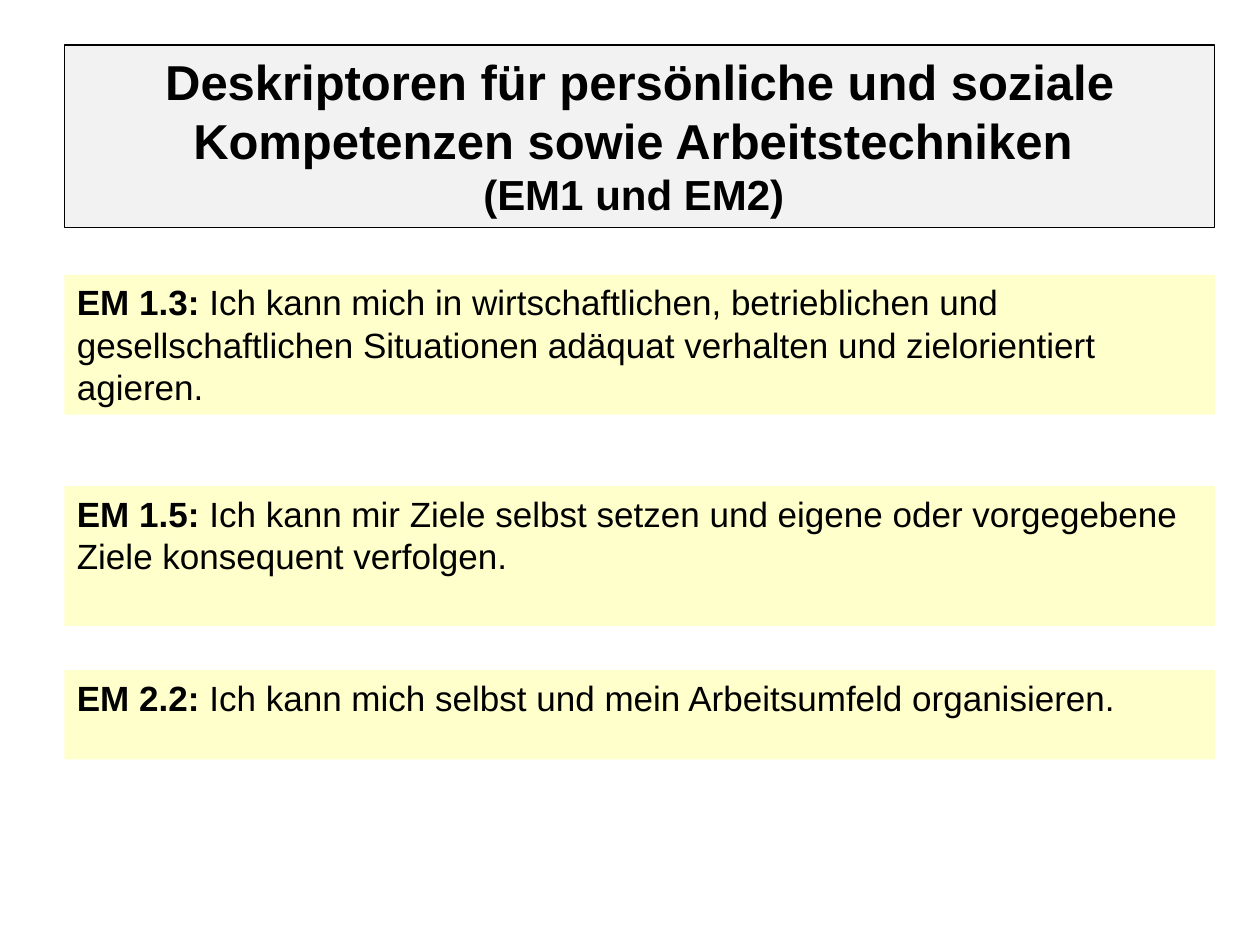
"""Build a slide of descriptors for personal and social competences."""
import pptx
import pptx.dml.color
import pptx.enum.shapes
import pptx.enum.text
import pptx.util

Cm = pptx.util.Cm
LEFT, WIDTH = 1.3, 23.19
TITLE = {
    "top": 0.91, "height": 3.68, "fill": "F2F2F2", "line": "000000", "align": "CENTER",
    "paragraphs": [
        [("Deskriptoren für persönliche und soziale Kompetenzen sowie Arbeitstechniken ", 28, True)],
        [("(EM1 und EM2) ", 24, True)],
    ],
}
DESCRIPTORS = [
    (5.54, 2.82, "EM 1.3: ", "Ich kann mich in wirtschaftlichen, betrieblichen und "
     "gesellschaftlichen Situationen adäquat verhalten und zielorientiert agieren."),
    (9.8, 2.82, "EM 1.5: ", "Ich kann mir Ziele selbst setzen und eigene oder "
     "vorgegebene Ziele konsequent verfolgen."),
    (13.51, 1.8, "EM 2.2: ", "Ich kann mich selbst und mein Arbeitsumfeld organisieren."),
]
FRAME_FORMAT = {
    "word_wrap": True,
    "auto_size": pptx.enum.text.MSO_AUTO_SIZE.NONE,
    "vertical_anchor": pptx.enum.text.MSO_ANCHOR.TOP,
}


def color(value):
    return pptx.dml.color.RGBColor.from_string(value)


def apply_format(target, values):
    for name, value in values.items():
        setattr(target, name, value)


def add_box(slide, top, height, fill, paragraphs, align="LEFT", line=None):
    shape = slide.shapes.add_shape(
        pptx.enum.shapes.MSO_SHAPE.RECTANGLE, Cm(LEFT), Cm(top), Cm(WIDTH), Cm(height))
    shape.shadow.inherit = False
    shape.fill.solid()
    shape.fill.fore_color.rgb = color(fill)
    if line:
        shape.line.color.rgb = color(line)
        shape.line.width = pptx.util.Pt(0.75)
    else:
        shape.line.fill.background()
    frame = shape.text_frame
    apply_format(frame, FRAME_FORMAT)
    for index, runs in enumerate(paragraphs):
        paragraph = frame.add_paragraph() if index else frame.paragraphs[0]
        paragraph.alignment = getattr(pptx.enum.text.PP_ALIGN, align)
        for text, size, bold in runs:
            run = paragraph.add_run()
            run.text = text
            apply_format(run.font, {"name": "Arial", "size": pptx.util.Pt(size), "bold": bold})
            run.font.color.rgb = color("000000")


def main():
    presentation = pptx.Presentation()
    apply_format(presentation, {"slide_width": Cm(25.4), "slide_height": Cm(19.05)})
    slide = presentation.slides.add_slide(presentation.slide_layouts[6])
    add_box(slide, **TITLE)
    for top, height, label, text in DESCRIPTORS:
        add_box(slide, top, height, "FFFFCC", [[(label, 20, True), (text, 20, False)]])
    presentation.save("out.pptx")


if __name__ == "__main__":
    main()
